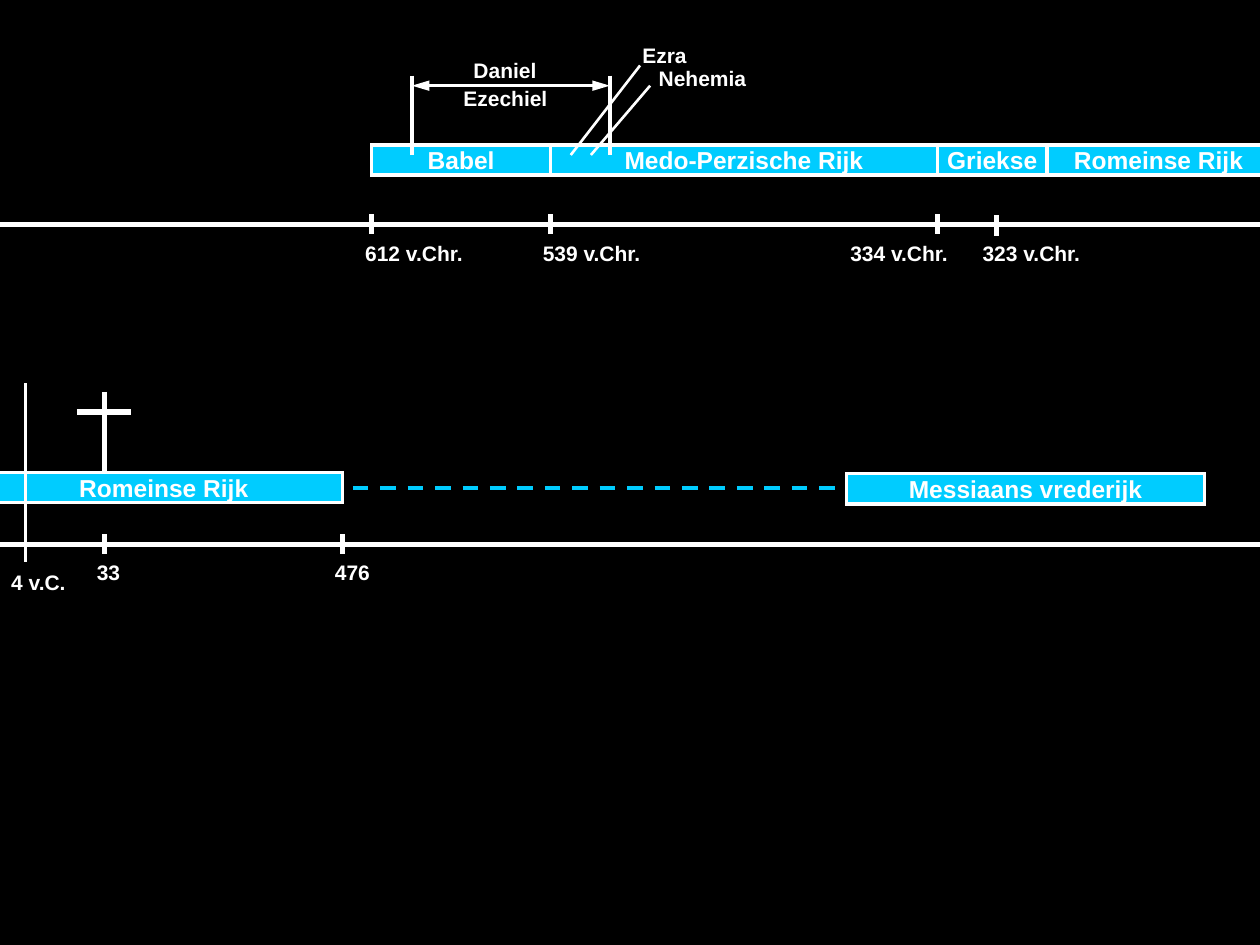
import pptx
import pptx.util
import pptx.dml.color
import pptx.enum.dml
import pptx.enum.shapes
import pptx.enum.text
from lxml import etree
from pptx.oxml.ns import qn
from pptx.util import Inches

WHITE = pptx.dml.color.RGBColor(0xFF, 0xFF, 0xFF)
BLACK = pptx.dml.color.RGBColor(0, 0, 0)
CYAN = pptx.dml.color.RGBColor(0x00, 0xCC, 0xFF)
BAR_HEIGHT = 0.24
LABEL_HEIGHT = 0.3

# Empires: name, left, top, width
EMPIRES = [
    ("Babel", 2.95, 1.15, 1.42),
    ("Medo-Perzische Rijk", 4.37, 1.15, 3.07),
    ("Griekse", 7.44, 1.15, 0.87),
    ("Romeinse Rijk", 8.31, 1.15, 1.77),
    ("Romeinse Rijk", -0.12, 3.75, 2.84),
    ("Messiaans vrederijk", 6.72, 3.76, 2.84),
]
# Labels: text, left, top, width
LABELS = [
    ("612 v.Chr.", 2.8, 1.86, 1),
    ("539 v.Chr.", 4.21, 1.86, 1),
    ("334 v.Chr.", 6.65, 1.86, 1),
    ("323 v.Chr.", 7.7, 1.86, 1),
    ("Daniel", 3.66, 0.41, 0.7),
    ("Ezechiel", 3.58, 0.63, 0.87),
    ("Ezra", 5, 0.29, 0.55),
    ("Nehemia", 5.13, 0.47, 0.93),
    ("4 v.C.", -0.01, 4.47, 0.65),
    ("33", 0.67, 4.39, 0.39),
    ("476", 2.56, 4.39, 0.48),
]
# Lines: start x, start y, end x, end y, width in points
AXES = [(-0.07, 1.78, 10.15, 1.78, 3), (-0.12, 4.32, 10.17, 4.32, 3)]
TICKS = [(2.95, 1.78), (4.37, 1.78), (7.44, 1.78), (7.91, 1.79),
         (0.83, 4.32), (2.72, 4.32)]
TICK_REACH = 0.08
PROPHET_LIMITS = [(x, 0.6, x, 1.23, 2) for x in (3.27, 4.84)]
POINTERS = [(5.08, 0.52, 4.53, 1.23, 1.5), (5.16, 0.68, 4.69, 1.23, 1.5)]
BIRTH = (0.2, 3.04, 0.2, 4.46, 1.5)
CROSS = [(0.83, 3.11, 0.83, 3.74, 3), (0.61, 3.27, 1.04, 3.27, 3)]
PROPHET_SPAN = (3.27, 0.68, 4.84, 0.68, 1.5)
INTERVAL = (2.8, 3.87, 6.65, 3.87, 2.25)


def write(shape, text, size):
    shape.text_frame.text = text
    shape.text_frame.word_wrap = False
    font = shape.text_frame.paragraphs[0].runs[0].font
    font.name, font.size, font.bold = "Arial", pptx.util.Pt(size), True
    font.color.rgb = WHITE


def add_empire(shapes, name, left, top, width):
    bar = shapes.add_shape(
        pptx.enum.shapes.MSO_SHAPE.RECTANGLE,
        Inches(left), Inches(top), Inches(width), Inches(BAR_HEIGHT))
    bar.shadow.inherit = False
    bar.fill.solid()
    bar.fill.fore_color.rgb = CYAN
    bar.line.color.rgb = WHITE
    bar.line.width = pptx.util.Pt(2)
    etree.SubElement(bar.line._get_or_add_ln(), qn("a:miter"), lim="800000")
    write(bar, name, 14)
    bar.text_frame.vertical_anchor = pptx.enum.text.MSO_ANCHOR.MIDDLE
    bar.text_frame.paragraphs[0].alignment = pptx.enum.text.PP_ALIGN.CENTER


def add_label(shapes, text, left, top, width):
    box = shapes.add_textbox(
        Inches(left), Inches(top), Inches(width), Inches(LABEL_HEIGHT))
    write(box, text, 12)
    box.text_frame.auto_size = pptx.enum.text.MSO_AUTO_SIZE.SHAPE_TO_FIT_TEXT


def add_line(shapes, x1, y1, x2, y2, width, color=WHITE):
    line = shapes.add_connector(
        pptx.enum.shapes.MSO_CONNECTOR.STRAIGHT,
        Inches(x1), Inches(y1), Inches(x2), Inches(y2))
    line.line.color.rgb = color
    line.line.width = pptx.util.Pt(width)
    etree.SubElement(line._element.spPr, qn("a:effectLst"))
    return line


def add_arrowheads(line):
    outline = line.line._get_or_add_ln()
    for end in ("a:headEnd", "a:tailEnd"):
        etree.SubElement(outline, qn(end), type="triangle", w="med", len="lg")


def main():
    deck = pptx.Presentation()
    deck.slide_width, deck.slide_height = Inches(10), Inches(7.5)
    page = deck.slides.add_slide(deck.slide_layouts[6])
    page.background.fill.solid()
    page.background.fill.fore_color.rgb = BLACK
    shapes = page.shapes

    for empire in EMPIRES:
        add_empire(shapes, *empire)
    for label in LABELS:
        add_label(shapes, *label)
    for line in AXES + PROPHET_LIMITS + POINTERS + [BIRTH]:
        add_line(shapes, *line)
    for x, y in TICKS:
        add_line(shapes, x, y - TICK_REACH, x, y + TICK_REACH, 3)
    cross = shapes.add_group_shape()
    for beam in CROSS:
        add_line(cross.shapes, *beam)
    add_arrowheads(add_line(shapes, *PROPHET_SPAN))
    interval = add_line(shapes, *INTERVAL, color=CYAN)
    interval.line.dash_style = pptx.enum.dml.MSO_LINE.DASH

    deck.save("out.pptx")


if __name__ == "__main__":
    main()
